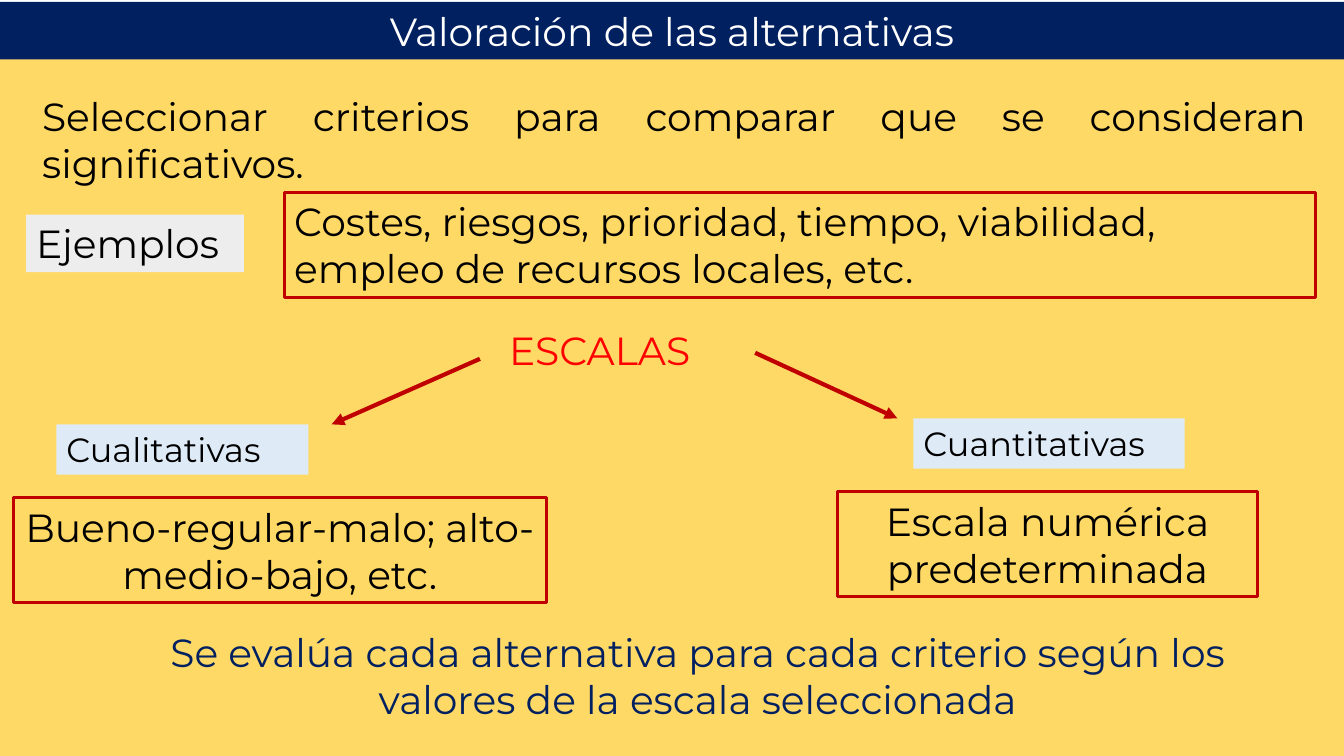
import pptx
import pptx.util
import pptx.dml.color
import pptx.enum.shapes
import pptx.enum.text
import pptx.oxml
import pptx.oxml.ns

Inches = pptx.util.Inches
Align = pptx.enum.text.PP_ALIGN
COLORS = {
    "gold": "FFD966", "navy": "002060", "white": "FFFFFF", "black": "000000",
    "gray": "EDEDED", "blue": "DEEBF7", "crimson": "C00000", "red": "FF0000",
}
FONT = "Montserrat"
LINE = 0.57
PAIR = 1.04
LABEL = 0.5


def tint(name):
    """Return the named colour."""
    return pptx.dml.color.RGBColor.from_string(COLORS[name])


def panel(slide, box, fill=None, line=None):
    """Draw a rectangle with an optional fill and outline."""
    kind = pptx.enum.shapes.MSO_SHAPE.RECTANGLE
    shape = slide.shapes.add_shape(kind, *map(Inches, box))
    shape.shadow.inherit = False
    if fill:
        shape.fill.solid()
        shape.fill.fore_color.rgb = tint(fill)
    else:
        shape.fill.background()
    if line:
        shape.line.color.rgb = tint(line)
        shape.line.width = pptx.util.Pt(2.25)
    else:
        shape.line.fill.background()
    return shape


def write(shape, text, color="black", align=Align.LEFT, size=28):
    """Put formatted text into a shape."""
    frame = shape.text_frame
    frame.text = text
    frame.word_wrap = True
    frame.vertical_anchor = pptx.enum.text.MSO_ANCHOR.TOP
    para = frame.paragraphs[0]
    para.alignment = align
    font = para.runs[0].font
    font.name = FONT
    font.size = pptx.util.Pt(size)
    font.color.rgb = tint(color)


def note(slide, box, text, color="black", align=Align.LEFT):
    """Add a plain text box."""
    write(slide.shapes.add_textbox(*map(Inches, box)), text, color, align)


def arrow(slide, start, end):
    """Draw a crimson arrow from start to end."""
    kind = pptx.enum.shapes.MSO_CONNECTOR.STRAIGHT
    link = slide.shapes.add_connector(kind, *map(Inches, start + end))
    link.line.color.rgb = tint("crimson")
    link.line.width = pptx.util.Pt(3)
    space = pptx.oxml.ns.nsdecls("a")
    tip = pptx.oxml.parse_xml(f'<a:tailEnd {space} type="triangle"/>')
    link.line._get_or_add_ln().append(tip)
    flat = pptx.oxml.parse_xml(f"<a:effectLst {space}/>")
    link._element.spPr.append(flat)


def header(slide, left, top, width, height):
    """Lay out the backdrop and the title bar."""
    panel(slide, (left, top, width, height), "gold")
    bar = panel(slide, (left, top, width, LINE), "navy")
    write(bar, "Valoración de las alternativas", "white", Align.CENTER)


def criteria(slide, left, top, width):
    """Lay out the criteria statement and its examples."""
    note(slide, (left + 0.06, top, width - 0.06, PAIR),
         "Seleccionar criterios para comparar que se consideran significativos.",
         align=Align.JUSTIFY)
    tag = panel(slide, (left, top + 1.26, 2.16, LINE), "gray")
    write(tag, "Ejemplos", align=Align.JUSTIFY)
    list_box = (left + 2.56, top + PAIR, width - 2.56, PAIR)
    write(panel(slide, list_box, line="crimson"),
          "Costes, riesgos, prioridad, tiempo, viabilidad, "
          "empleo de recursos locales, etc.")


def scale(slide, left, top, width, inset, span, name, text, start, tip):
    """Lay out one scale: its arrow, label and framed example."""
    label = panel(slide, (left + inset, top, span, LABEL), "blue")
    write(label, name, size=24)
    frame = panel(slide, (left, top + 0.73, width, PAIR), line="crimson")
    write(frame, text, align=Align.CENTER)
    arrow(slide, (start, top - 0.65), (tip, top))


def scales(slide, left, top):
    """Lay out the heading and both kinds of scale."""
    note(slide, (left + 4.82, top, 2.32, LINE), "ESCALAS", "red")
    scale(slide, left, top + 1.02, 5.29, 0.43, 2.5, "Cualitativas",
          "Bueno-regular-malo; alto-medio-bajo, etc.", left + 4.63, left + 3.16)
    scale(slide, left + 8.18, top + 0.96, 4.16, 0.75, 2.69, "Cuantitativas",
          "Escala numérica predeterminada", left + 7.36, left + 8.77)


def closing(slide, left, top, width):
    """Lay out the closing statement."""
    note(slide, (left, top, width, PAIR),
         "Se evalúa cada alternativa para cada criterio según los "
         "valores de la escala seleccionada", "navy", Align.CENTER)


def main():
    """Build and save the slide."""
    deck = pptx.Presentation()
    deck.slide_width = Inches(13.33)
    deck.slide_height = Inches(7.5)
    slide = deck.slides.add_slide(deck.slide_layouts[6])
    header(slide, 0, 0.02, 13.33, 7.48)
    criteria(slide, 0.26, 0.87, 12.79)
    scales(slide, 0.13, 3.19)
    closing(slide, 0.92, 6.18, 12)
    deck.save("out.pptx")


if __name__ == "__main__":
    main()
